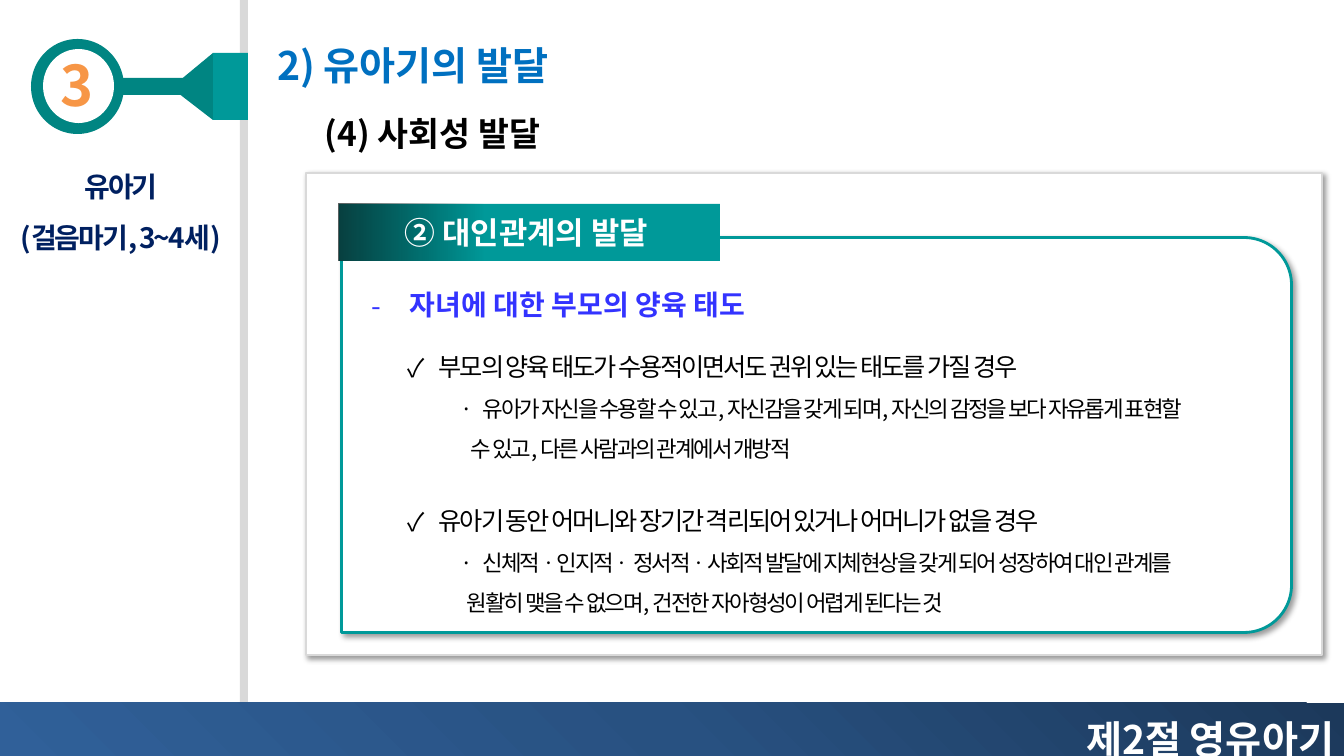
from dataclasses import dataclass
from typing import Any, NamedTuple, Optional

from lxml.etree import SubElement
from pptx import Presentation
from pptx.dml.color import RGBColor
from pptx.enum.shapes import MSO_SHAPE
from pptx.enum.text import MSO_ANCHOR, MSO_AUTO_SIZE, PP_ALIGN
from pptx.oxml.ns import qn
from pptx.util import Emu, Pt

EMU_PER_PX = 914400 / 100.8
FONT = "Noto Sans CJK KR"
TEAL, DARK_TEAL, GRAY, WHITE, BLACK = "009999", "008582", "D9D9D9", "FFFFFF", "000000"


class Box(NamedTuple):
    left: int
    top: int
    width: int
    height: int


class Stop(NamedTuple):
    percent: int
    color: str
    opacity: int = 100


@dataclass
class Panel:
    box: Box
    fill: str = WHITE
    kind: MSO_SHAPE = MSO_SHAPE.RECTANGLE
    line: Optional[str] = None
    rotation: int = 0
    corners: tuple[float, ...] = ()
    gradient: tuple[Stop, ...] = ()
    angle: int = 0
    shadow: bool = False


@dataclass
class Line:
    text: str
    size: int
    margin: int = 0
    indent: int = 0
    bullet: str = ""
    before: int = 0


def px(length: float) -> Emu:
    return Emu(round(length * EMU_PER_PX))


def paint(fill: Any, color: str) -> None:
    fill.solid()
    fill.fore_color.rgb = RGBColor.from_string(color)


def add_color(parent: Any, color: str, opacity: int) -> None:
    element = SubElement(parent, qn("a:srgbClr"), val=color)
    SubElement(element, qn("a:alpha"), val=str(opacity * 1000))


def paint_gradient(shape: Any, stops: tuple[Stop, ...], angle: int) -> None:
    shape.fill.gradient()
    gradient = shape._element.spPr.find(qn("a:gradFill"))
    for child in list(gradient):
        gradient.remove(child)
    stop_list = SubElement(gradient, qn("a:gsLst"))
    for stop in stops:
        element = SubElement(stop_list, qn("a:gs"), pos=str(stop.percent * 1000))
        add_color(element, stop.color, stop.opacity)
    SubElement(gradient, qn("a:lin"), ang=str(angle * 60000), scaled="0")


def add_shadow(shape: Any) -> None:
    effects = shape._element.spPr.find(qn("a:effectLst"))
    shadow = SubElement(effects, qn("a:outerShdw"), blurRad=str(Pt(4)), dist=str(Pt(3)),
                        dir=str(45 * 60000), algn="tl", rotWithShape="0")
    add_color(shadow, BLACK, 40)


def add_panel(slide: Any, panel: Panel) -> None:
    shape = slide.shapes.add_shape(panel.kind, *map(px, panel.box))
    shape.rotation = panel.rotation
    shape.shadow.inherit = False
    for index, corner in enumerate(panel.corners):
        shape.adjustments[index] = corner
    if panel.gradient:
        paint_gradient(shape, panel.gradient, panel.angle)
    else:
        paint(shape.fill, panel.fill)
    if panel.line:
        paint(shape.line.fill, panel.line)
        shape.line.width = Pt(2)
    else:
        shape.line.fill.background()
    if panel.shadow:
        add_shadow(shape)


def add_funnel(slide: Any) -> None:
    builder = slide.shapes.build_freeform(178, 82, scale=EMU_PER_PX)
    builder.add_line_segments([(213, 53), (213, 120), (178, 93)], close=True)
    shape = builder.convert_to_shape()
    shape.shadow.inherit = False
    paint(shape.fill, DARK_TEAL)
    shape.line.fill.background()


def write_text(shape: Any, lines: list[Line], *, color: str, bold: bool = True,
               align: PP_ALIGN = PP_ALIGN.LEFT, spacing: float = 1.0,
               tracking: float = 0) -> None:
    frame = shape.text_frame
    frame.word_wrap = True
    frame.auto_size = MSO_AUTO_SIZE.NONE
    frame.vertical_anchor = MSO_ANCHOR.TOP
    for index, line in enumerate(lines):
        paragraph = frame.add_paragraph() if index else frame.paragraphs[0]
        paragraph.alignment = align
        paragraph.line_spacing = spacing
        if line.before:
            paragraph.space_before = Pt(line.before)
        properties = paragraph._p.get_or_add_pPr()
        properties.set("marL", str(px(line.margin)))
        properties.set("indent", str(px(line.indent)))
        if line.bullet:
            SubElement(properties, qn("a:buFont"), typeface=FONT)
            SubElement(properties, qn("a:buChar"), char=line.bullet)
        run = paragraph.add_run()
        run.text = line.text
        run.font.size = Pt(line.size)
        run.font.bold = bold
        run.font.name = FONT
        paint(run.font.fill, color)
        run_properties = run._r.get_or_add_rPr()
        SubElement(run_properties, qn("a:ea"), typeface=FONT)
        if tracking:
            run_properties.set("spc", str(round(tracking * 100)))


def add_text(slide: Any, box: Box, lines: list[Line], **text_format: Any) -> None:
    write_text(slide.shapes.add_textbox(*map(px, box)), lines, **text_format)


def check(text: str, before: int = 0) -> Line:
    return Line(text, 18, margin=31, indent=-31, bullet="✓", before=before)


def detail(text: str) -> Line:
    return Line(text, 16, margin=75, indent=-22, bullet="·")


def continuation(text: str, margin: int) -> Line:
    return Line(text, 16, margin=margin)


FOOTER_STOPS = (Stop(0, "1C395B"), Stop(50, "285181"), Stop(100, "306099"))
SHADE_STOPS = (Stop(0, "0D0D0D", 64), Stop(100, BLACK, 0))

SIDEBAR = [
    Panel(Box(240, 0, 8, 712), GRAY),
    Panel(Box(31, 39, 93, 95), DARK_TEAL, MSO_SHAPE.OVAL),
    Panel(Box(43, 49, 71, 74), WHITE, MSO_SHAPE.OVAL),
    Panel(Box(213, 53, 35, 67), TEAL),
    Panel(Box(118, 78, 78, 17), DARK_TEAL),
    Panel(Box(0, 703, 1344, 53), gradient=FOOTER_STOPS, angle=135),
]
CONTENT = [
    Panel(Box(306, 173, 1016, 482), line=GRAY, shadow=True),
    Panel(Box(619, -40, 395, 950), kind=MSO_SHAPE.ROUND_2_SAME_RECTANGLE, line=TEAL,
          rotation=90, corners=(0.12, 0), shadow=True),
    Panel(Box(339, 204, 381, 57), TEAL),
    Panel(Box(339, 204, 146, 57), gradient=SHADE_STOPS),
]
FINDINGS = [
    check("부모의 양육 태도가 수용적이면서도 권위 있는 태도를 가질 경우"),
    detail("유아가 자신을 수용할 수 있고, 자신감을 갖게 되며, 자신의 감정을 보다 자유롭게 표현할"),
    continuation("수 있고, 다른 사람과의 관계에서 개방적", 63),
    check("유아기 동안 어머니와 장기간 격리되어 있거나 어머니가 없을 경우", before=20),
    detail("신체적ㆍ인지적ㆍ 정서적ㆍ사회적 발달에 지체현상을 갖게 되어 성장하여 대인 관계를"),
    continuation("원활히 맺을 수 없으며, 건전한 자아형성이 어렵게 된다는 것", 59),
]


def main() -> None:
    presentation = Presentation()
    presentation.slide_width, presentation.slide_height = px(1344), px(756)
    slide = presentation.slides.add_slide(presentation.slide_layouts[5])

    title = slide.shapes.title
    title.left, title.top, title.width, title.height = map(px, Box(267, 36, 323, 57))
    write_text(title, [Line("2) 유아기의 발달", 28)], color="0070C0")

    for panel in SIDEBAR:
        add_panel(slide, panel)
    add_funnel(slide)
    add_text(slide, Box(51, 46, 53, 78), [Line("3", 40)], color="F79646", align=PP_ALIGN.CENTER)
    add_text(slide, Box(648, 687, 696, 82), [Line("제2절 영유아기", 28)], color=WHITE,
             align=PP_ALIGN.RIGHT, spacing=1.5)
    add_text(slide, Box(0, 148, 242, 160), [Line("유아기", 20), Line("(걸음마기, 3~4세)", 20)],
             color="002060", align=PP_ALIGN.CENTER, spacing=1.5, tracking=-1.5)
    add_text(slide, Box(315, 108, 258, 50), [Line("(4) 사회성 발달", 24)], color=BLACK)

    for panel in CONTENT:
        add_panel(slide, panel)
    add_text(slide, Box(395, 209, 291, 47), [Line("② 대인관계의 발달", 22)], color=WHITE)
    add_text(slide, Box(362, 283, 437, 44),
             [Line("자녀에 대한 부모의 양육 태도", 20, margin=38, indent=-38, bullet="-")],
             color="3333FF")
    add_text(slide, Box(398, 331, 877, 287), FINDINGS, color=BLACK, bold=False,
             align=PP_ALIGN.JUSTIFY, spacing=1.5, tracking=-1.5)
    presentation.save("out.pptx")


if __name__ == "__main__":
    main()
